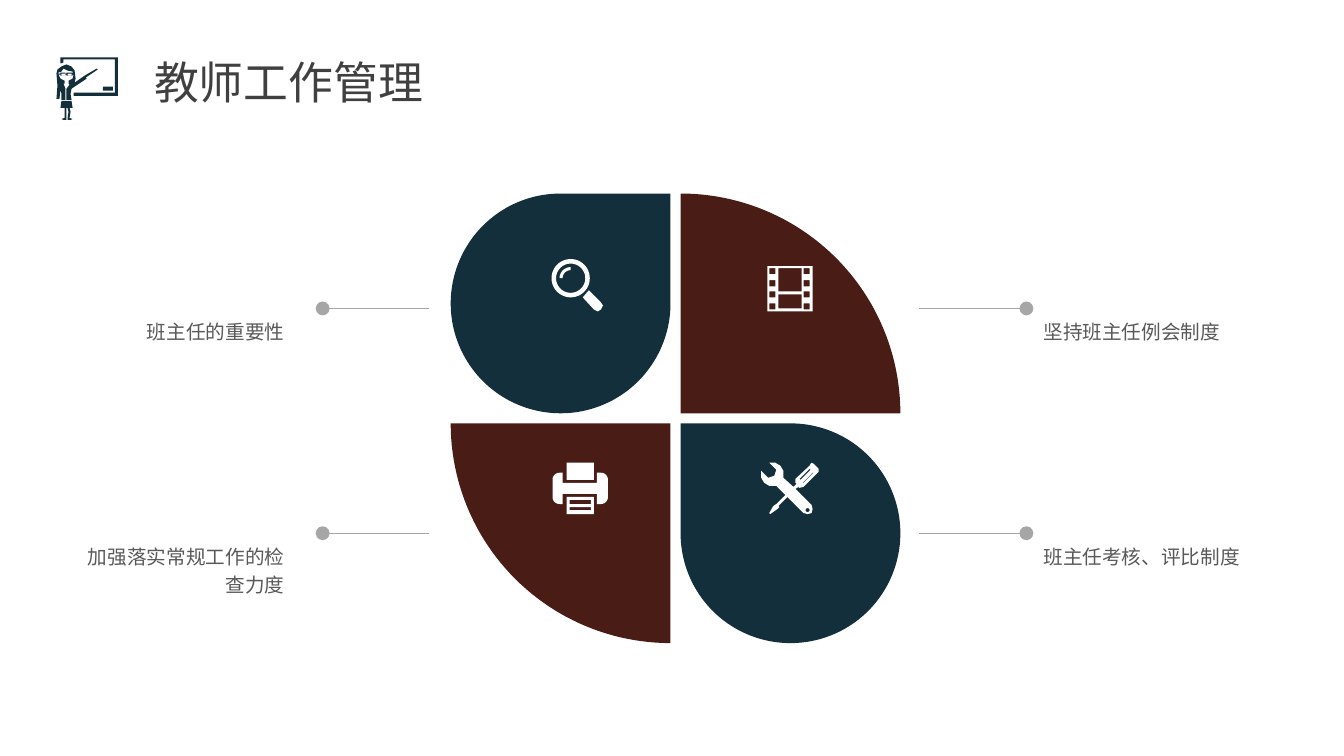
"""Build the teacher work management slide with four petals and their labels."""
from dataclasses import dataclass
from itertools import product
from math import cos, radians, sin

from lxml.etree import SubElement
from pptx import Presentation
from pptx.dml.color import RGBColor
from pptx.enum.shapes import MSO_CONNECTOR as Connector, MSO_SHAPE as Preset
from pptx.enum.text import MSO_ANCHOR as Anchor, PP_ALIGN as Align
from pptx.oxml.ns import qn
from pptx.shapes.autoshape import Shape
from pptx.slide import Slide
from pptx.util import Inches, Pt

Contour = list[tuple[float, float]]


@dataclass(frozen=True)
class Theme:
    """Colours, font and type sizes of the slide."""
    navy: str = "122F3B"
    maroon: str = "491D16"
    white: str = "FFFFFF"
    rule: str = "A6A6A6"
    heading: str = "404040"
    body: str = "595959"
    font: str = "Calibri"
    heading_size: int = 32
    body_size: int = 14


@dataclass(frozen=True)
class Callout:
    """A label beside a petal and its dotted rule."""
    text: str
    text_left: float
    dot: float
    rule_end: float
    top: float
    align: Align


THEME = Theme()
PETAL, STEP, LEFT, TOP = 2.18, 2.28, 4.47, 1.92
CALLOUTS = [
    Callout("坚持班主任例会制度", 10.25, 10.18, 9.12, 3.06, Align.LEFT),
    Callout("班主任考核、评比制度", 10.25, 10.18, 9.12, 5.29, Align.LEFT),
    Callout("班主任的重要性", 0.74, 3.2, 4.25, 3.06, Align.RIGHT),
    Callout("加强落实常规工作的检查力度", 0.74, 3.2, 4.25, 5.29, Align.RIGHT),
]


def arc(x: float, y: float, radius: float, start: int, end: int) -> Contour:
    """Return points along a circle, with angles in clockwise degrees."""
    steps = 48
    angles = [radians(start + (end - start) * i / steps) for i in range(steps + 1)]
    return [(x + radius * cos(a), y + radius * sin(a)) for a in angles]


def rect(left: float, top: float, width: float, height: float) -> Contour:
    """Return the corners of a rectangle."""
    right, bottom = left + width, top + height
    return [(left, top), (right, top), (right, bottom), (left, bottom)]


TEACHER = [
    [(.61, 1), (.71, 1), (.72, 1.07), (.69, 1.07), (.7, 1.11), (.69, 1.17), (.72, 1.18),
     (.7, 1.19), (.67, 1.19), (.67, 1.17), (.68, 1.11), (.67, 1.07), (.66, 1.07),
     (.66, 1.19), (.63, 1.19), (.61, 1.18), (.64, 1.17), (.64, 1.07), (.6, 1.07)],
    rect(1.02, .86, .1, .04),
    rect(.67, .73, .04, .02),
    rect(.61, .73, .04, .02),
    [(.63, .68), (.61, .71), (.58, .72), (.58, .73), (.6, .73), (.6, .72), (.65, .72),
     (.65, .73), (.66, .73), (.66, .72), (.72, .72), (.73, .73), (.72, .71), (.67, .7)],
    [(.66, .64), (.71, .66), (.74, .7), (.75, .78), (.74, .82), (.84, .75), (.96, .68),
     (.97, .69), (.85, .77), (.86, .78), (.71, .88), (.7, .93), (.71, .99), (.66, .99),
     (.66, .88), (.69, .84), (.68, .83), (.68, .8), (.72, .78), (.73, .74), (.72, .74),
     (.72, .75), (.66, .75), (.66, .74), (.65, .74), (.65, .75), (.6, .75), (.6, .74),
     (.58, .74), (.6, .78), (.64, .8), (.64, .83), (.63, .83), (.65, .88), (.65, .99),
     (.61, .99), (.61, .93), (.6, .89), (.59, .98), (.56, .98), (.57, .85), (.56, .73),
     (.57, .69), (.61, .66), (.63, .65)],
    [(.6, .57), (1.17, .57), (1.17, .95), (.73, .95), (.73, .92), (1.14, .92),
     (1.14, .59), (.63, .59), (.63, .62), (.6, .63)],
]
MAGNIFIER = [
    [(5.78, 2.95), (5.84, 2.88), (5.96, 3), (5.98, 3.03), (5.96, 3.07), (5.93, 3.09),
     (5.89, 3.07)],
    arc(5.66, 2.76, .19, 0, 360),
    arc(5.66, 2.76, .145, 0, 360),
    arc(5.66, 2.76, .11, 180, 270) + arc(5.66, 2.76, .08, 270, 180),
]
FILM = [
    rect(7.61, 2.64, .45, .45),
    *(rect(x, y, .06, .06) for x, y in product((7.63, 7.97), (2.66, 2.78, 2.89, 3.01))),
    rect(7.72, 2.66, .23, .23),
    rect(7.72, 2.92, .23, .14),
]
TOOLS = [
    [(8.12, 4.65), (8.07, 4.6), (8.05, 4.59), (8.04, 4.6), (8.03, 4.62), (7.89, 4.75),
     (7.89, 4.79), (7.9, 4.8), (7.87, 4.83), (7.77, 4.74), (7.77, 4.67), (7.74, 4.62),
     (7.69, 4.59), (7.63, 4.59), (7.7, 4.66), (7.68, 4.72), (7.62, 4.74), (7.55, 4.67),
     (7.55, 4.74), (7.58, 4.79), (7.63, 4.82), (7.7, 4.82), (7.79, 4.91), (7.7, 5),
     (7.67, 5.02), (7.63, 5.09), (7.64, 5.1), (7.71, 5.05), (7.73, 5.03), (7.72, 5.02),
     (7.81, 4.93), (7.97, 5.09), (8.01, 5.1), (8.05, 5.09), (8.06, 5.05), (8.05, 5.01),
     (7.89, 4.85), (7.92, 4.83), (7.93, 4.84), (7.97, 4.83), (8.1, 4.7), (8.12, 4.68)],
    arc(8.01, 5.06, .02, 0, 360),
    [(7.94, 4.76), (7.93, 4.75), (8.03, 4.65), (8.04, 4.66)],
    [(7.97, 4.79), (7.96, 4.79), (8.06, 4.69), (8.07, 4.69)],
]
PRINTER = [
    rect(5.62, 4.93, .27, .17),
    rect(5.65, 4.96, .21, .04),
    rect(5.65, 5.03, .21, .03),
    rect(5.62, 4.59, .27, .17),
    [(5.92, 4.69), *arc(5.96, 4.76, .07, -90, 0), *arc(5.96, 4.93, .07, 0, 90),
     (5.92, 5), (5.92, 4.9), (5.58, 4.9), (5.58, 5), *arc(5.55, 4.93, .07, 90, 180),
     *arc(5.55, 4.76, .07, 180, 270), (5.58, 4.69), (5.58, 4.79), (5.92, 4.79)],
]


def paint(shape: Shape, colour: str) -> None:
    """Give a shape a flat fill without line or shadow."""
    shape.shadow.inherit = False
    shape.fill.solid()
    shape.fill.fore_color.rgb = RGBColor.from_string(colour)
    shape.line.fill.background()


def add_outline(page: Slide, contours: list[Contour], colour: str) -> None:
    """Draw closed contours as one freeform, where inner contours are holes."""
    paths = [[(Inches(x), Inches(y)) for x, y in contour] for contour in contours]
    builder = page.shapes.build_freeform(*paths[0][0])
    builder.add_line_segments(paths[0][1:])
    for start, *rest in paths[1:]:
        builder.move_to(*start)
        builder.add_line_segments(rest)
    paint(builder.convert_to_shape(), colour)


def add_drop(page: Slide, left: float, top: float, rotation: int) -> None:
    """Draw a teardrop petal."""
    drop = page.shapes.add_shape(
        Preset.TEAR, Inches(left), Inches(top), Inches(PETAL), Inches(PETAL))
    drop.rotation = rotation
    paint(drop, THEME.navy)


def add_text(page: Slide, text: str, *, left: float, top: float, width: float,
             height: float, size: int, colour: str, align: Align = Align.LEFT,
             anchor: Anchor = Anchor.TOP, spacing: float = 1.0) -> None:
    """Place a wrapped text box."""
    box = page.shapes.add_textbox(
        Inches(left), Inches(top), Inches(width), Inches(height))
    frame = box.text_frame
    frame.word_wrap = True
    frame.vertical_anchor = anchor
    para = frame.paragraphs[0]
    para.alignment = align
    para.line_spacing = spacing
    span = para.add_run()
    span.text = text
    span.font.name = THEME.font
    span.font.size = Pt(size)
    span.font.color.rgb = RGBColor.from_string(colour)


def add_callout(page: Slide, callout: Callout) -> None:
    """Draw a rule with a round end and the label below it."""
    height = Inches(callout.top)
    rule = page.shapes.add_connector(
        Connector.STRAIGHT, Inches(callout.dot), height, Inches(callout.rule_end), height)
    rule.line.color.rgb = RGBColor.from_string(THEME.rule)
    rule.line.width = Pt(1)
    SubElement(rule.line._get_or_add_ln(), qn("a:headEnd"), type="oval", w="lg", len="lg")
    SubElement(rule._element.spPr, qn("a:effectLst"))
    add_text(page, callout.text, left=callout.text_left, top=callout.top + .02,
             width=2.18, height=.57, size=THEME.body_size, colour=THEME.body,
             align=callout.align, spacing=1.2)


def main() -> None:
    """Assemble and save the slide."""
    deck = Presentation()
    deck.slide_width, deck.slide_height = Inches(13.33), Inches(7.5)
    page = deck.slides.add_slide(deck.slide_layouts[6])
    add_outline(page, TEACHER, THEME.navy)
    add_text(page, "教师工作管理", left=1.43, top=.33, width=3.41, height=.96,
             size=THEME.heading_size, colour=THEME.heading, anchor=Anchor.MIDDLE)
    for callout in CALLOUTS:
        add_callout(page, callout)
    right, bottom = LEFT + STEP, TOP + STEP
    upper, inner = TOP + PETAL, LEFT + PETAL
    add_drop(page, LEFT, TOP, 0)
    add_outline(page, [[(right, upper), *arc(right, upper, PETAL, -90, 0)]], THEME.maroon)
    add_drop(page, right, bottom, 270)
    add_outline(page, [[(inner, bottom), *arc(inner, bottom, PETAL, 90, 180)]], THEME.maroon)
    for icon in (MAGNIFIER, FILM, TOOLS, PRINTER):
        add_outline(page, icon, THEME.white)
    deck.save("out.pptx")


if __name__ == "__main__":
    main()
